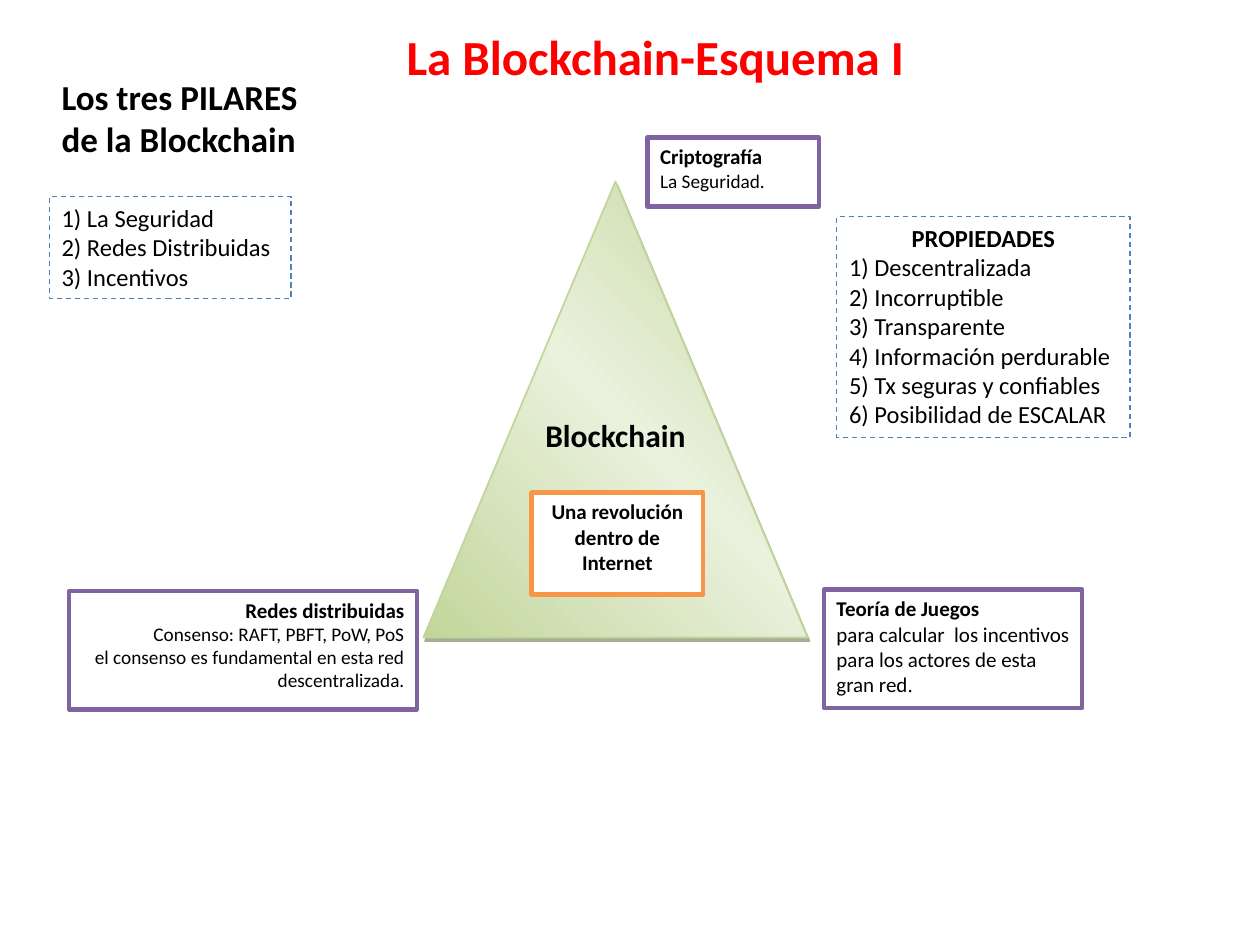
from copy import deepcopy

from lxml import etree
from pptx import Presentation
from pptx.dml.color import RGBColor
from pptx.enum.dml import MSO_LINE
from pptx.enum.shapes import MSO_SHAPE
from pptx.enum.text import MSO_ANCHOR, PP_ALIGN
from pptx.oxml.ns import qn
from pptx.util import Inches, Pt

LEFT, CENTER, RIGHT = PP_ALIGN.LEFT, PP_ALIGN.CENTER, PP_ALIGN.RIGHT
TOP = MSO_ANCHOR.TOP
DASH = MSO_LINE.DASH
RECT, TRIANGLE = MSO_SHAPE.RECTANGLE, MSO_SHAPE.ISOSCELES_TRIANGLE

WIDTH, HEIGHT = 10, 7.5
COLUMNS, ROWS = 100, 75
BLACK, WHITE, RED = "000000", "FFFFFF", "FF0000"
PURPLE, ORANGE, BLUE = "8064A2", "F79646", "4F81BD"
GREEN, PALE_GREEN, DARK_GREEN = "C2D69B", "EAF1DD", "4E6128"


def color(value):
    return RGBColor.from_string(value)


class Deck:
    font = "Calibri"

    def __init__(self):
        self.prs = Presentation()
        self.prs.slide_width = Inches(WIDTH)
        self.prs.slide_height = Inches(HEIGHT)
        self.s = self.prs.slides.add_slide(self.prs.slide_layouts[6])

    def place(self, col, row, cols, rows):
        x, y = WIDTH / COLUMNS, HEIGHT / ROWS
        return Inches(col * x), Inches(row * y), Inches(cols * x), Inches(rows * y)

    def set_text(self, sp, lines, align=LEFT, ink=BLACK):
        tf = sp.text_frame
        tf.word_wrap = True
        tf.vertical_anchor = TOP
        for i, (text, size, bold) in enumerate(lines):
            p = tf.paragraphs[0] if i == 0 else tf.add_paragraph()
            p.alignment = align
            p.font.name = self.font
            p.font.size = Pt(size)
            p.font.bold = bold
            p.font.color.rgb = color(ink)
            p.add_run().text = text
        return tf

    def label(self, grid, text, size, align=LEFT, ink=BLACK):
        sp = self.s.shapes.add_textbox(*self.place(*grid))
        self.set_text(sp, [(text, size, True)], align, ink)

    def shape(self, kind, grid, line, weight):
        sp = self.s.shapes.add_shape(kind, *self.place(*grid))
        sp.shadow.inherit = False
        sp.line.color.rgb = color(line)
        sp.line.width = Pt(weight)
        return sp

    def box(self, grid, line, lines, align=LEFT):
        sp = self.shape(RECT, grid, line, 2.5)
        sp.fill.solid()
        sp.fill.fore_color.rgb = color(WHITE)
        return self.set_text(sp, lines, align)

    def dashed_list(self, grid, items, heading=None):
        sp = self.shape(RECT, grid, BLUE, 0.75)
        sp.fill.background()
        sp.line.dash_style = DASH
        lines = [(f"{i}) {item}", 14, False) for i, item in enumerate(items, 1)]
        if heading:
            lines.insert(0, (heading, 14, True))
        tf = self.set_text(sp, lines)
        if heading:
            tf.paragraphs[0].alignment = CENTER

    def triangle(self, grid, text):
        sp = self.shape(TRIANGLE, grid, GREEN, 1)
        sp.fill.gradient()
        sp.fill.gradient_angle = 45
        stops = sp._element.spPr.find(".//" + qn("a:gsLst"))
        stops.append(deepcopy(stops[0]))
        for stop, (share, tint) in zip(
            sp.fill.gradient_stops, [(0, GREEN), (0.5, PALE_GREEN), (1, GREEN)]
        ):
            stop.position = share
            stop.color.rgb = color(tint)
        effects = sp._element.spPr.find(qn("a:effectLst"))
        shadow = etree.SubElement(
            effects, qn("a:outerShdw"), dist=str(Pt(2.2)), dir=str(63 * 60000)
        )
        tint = etree.SubElement(shadow, qn("a:srgbClr"), val=DARK_GREEN)
        etree.SubElement(tint, qn("a:alpha"), val="50000")
        self.set_text(sp, [(text, 18, True)], CENTER)


def main():
    deck = Deck()
    deck.label((3.9, 5.5, 22.7, 7.7), "Los tres PILARES de la Blockchain", 20)
    deck.triangle((33.6, 14.4, 30.5, 36.2), "Blockchain")
    deck.box(
        (51.4, 10.9, 13.6, 5.5),
        PURPLE,
        [("Criptografía", 12, True), ("La Seguridad.", 11, False)],
    )
    deck.box(
        (5.5, 46.9, 27.6, 9.4),
        PURPLE,
        [
            ("Redes distribuidas", 12, True),
            ("Consenso: RAFT, PBFT, PoW, PoS", 11, False),
            ("el consenso es fundamental en esta red descentralizada.", 11, False),
        ],
        RIGHT,
    )
    tf = deck.box(
        (65.4, 46.8, 20.5, 9.4),
        PURPLE,
        [
            ("Teoría de Juegos", 12, True),
            ("para calcular  los incentivos para los actores de esta gran red", 12, False),
        ],
    )
    r = tf.paragraphs[-1].add_run()
    r.text = "."
    r.font.name = "Times New Roman"
    deck.box(
        (42.2, 39.1, 13.6, 8.1),
        ORANGE,
        [("Una revolución dentro de", 12, True), ("Internet", 12, True)],
        CENTER,
    )
    deck.label((30.5, 1.6, 43, 5.7), "La Blockchain-Esquema I", 28, CENTER, RED)
    deck.dashed_list(
        (3.9, 15.6, 19.2, 8.1), ["La Seguridad", "Redes Distribuidas", "Incentivos"]
    )
    deck.dashed_list(
        (66.4, 17.2, 23.3, 17.5),
        [
            "Descentralizada",
            "Incorruptible",
            "Transparente",
            "Información perdurable",
            "Tx seguras y confiables",
            "Posibilidad de ESCALAR",
        ],
        "PROPIEDADES",
    )
    deck.prs.save("out.pptx")


if __name__ == "__main__":
    main()
